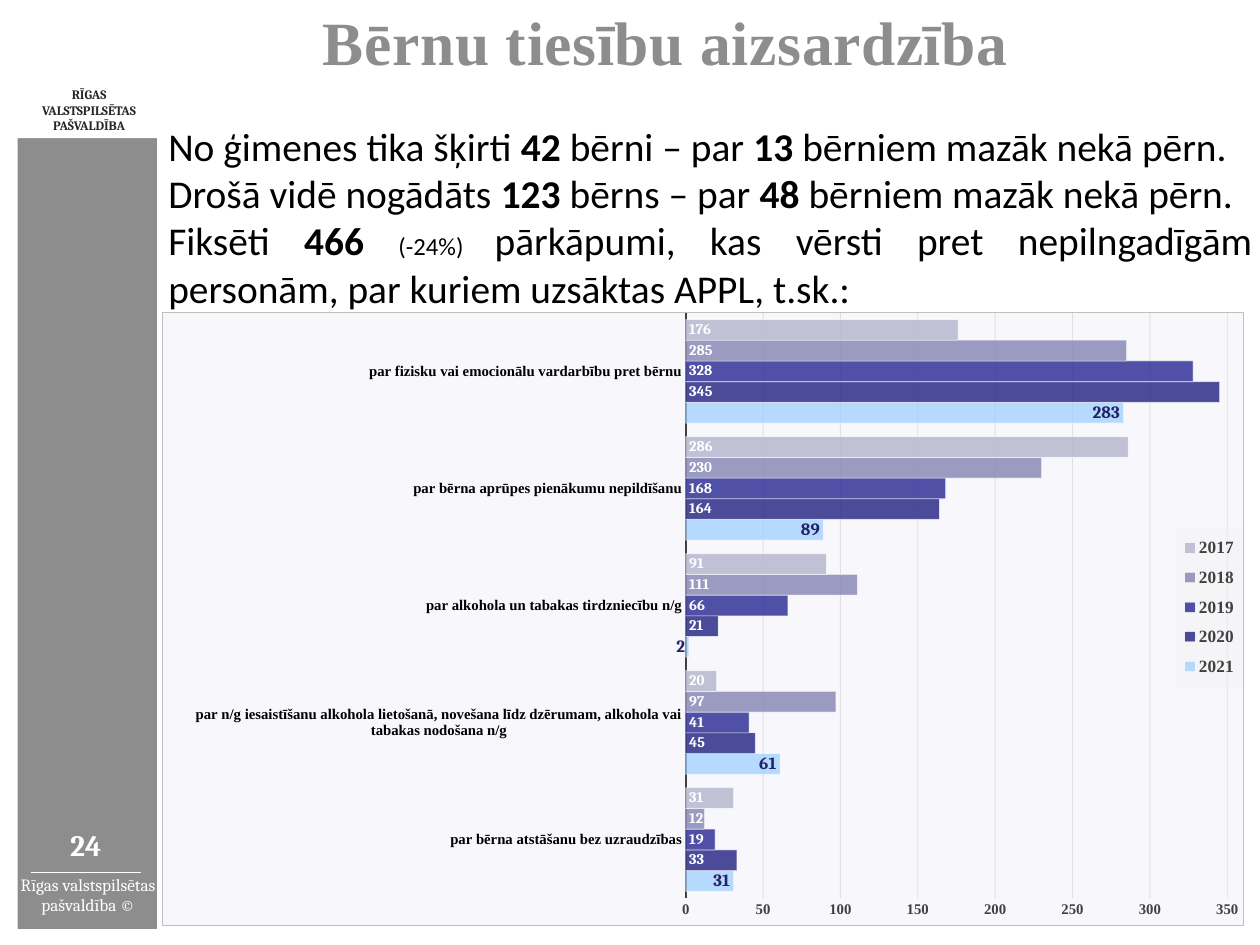
"""Build the slide on protecting children's rights, with a bar chart by year."""
from pptx import Presentation, util as u
from pptx.chart import data as cd
from pptx.dml import color as dc
from pptx.enum import chart as ec, shapes as es, text as et
from pptx.oxml import parse_xml
from pptx.oxml.ns import nsdecls

Theme = {
    "grey": "8C8D8C", "white": "FFFFFF", "black": "000000", "dark": "262626",
    "axis": "404040", "grid": "0D0D0D", "navy": "222267", "pale": "D1D1F0",
    "edge": "BFBFBF", "key": "F2F2F2",
    "head": "Times New Roman", "side": "Cambria", "body": "Calibri",
    "title": 50, "text": 32, "small": 20, "page": 24, "foot": 14, "name": 10.5,
    "tick": 12, "big": 14,
}
Years = [
    ("2021", "99CCFF", 69, (31, 61, 2, 89, 283)),
    ("2020", "2D2D88", 85, (33, 45, 21, 164, 345)),
    ("2019", "333399", 85, (19, 41, 66, 168, 328)),
    ("2018", "8B8BB7", 85, (12, 97, 111, 230, 285)),
    ("2017", "B8B8D0", 85, (31, 20, 91, 286, 176)),
]
Cats = [
    "par bērna atstāšanu bez uzraudzības",
    "par n/g iesaistīšanu alkohola lietošanā, novešana līdz dzērumam, alkohola vai tabakas nodošana n/g",
    "par alkohola un tabakas tirdzniecību n/g",
    "par bērna aprūpes pienākumu nepildīšanu",
    "par fizisku vai emocionālu vardarbību pret bērnu",
]

deck = Presentation()
deck.slide_width, deck.slide_height = u.Inches(14.22), u.Inches(10.67)
col, row = deck.slide_width / 100, deck.slide_height / 100
slide = deck.slides.add_slide(deck.slide_layouts[6])
shapes = slide.shapes
rgb = dc.RGBColor.from_string


def place(x, y, w, h):
    """Turn percent of the slide into lengths."""
    return [int(x * col), int(y * row), int(w * col), int(h * row)]


def style(font, face, size, color, bold=True):
    """Set face, size, colour and weight of a font."""
    font.name, font.size, font.bold = face, u.Pt(size), bold
    font.color.rgb = rgb(Theme[color])


for spot, fill in [((1.41, 14.06, 11.04, 84.25), "grey"), ((1.27, 8.72, 11.6, 5.9), "white")]:
    block = shapes.add_shape(es.MSO_SHAPE.RECTANGLE, *place(*spot))
    block.shadow.inherit = False
    block.fill.solid()
    block.fill.fore_color.rgb = rgb(Theme[fill])
    block.line.fill.background()

x, y, end, base = place(2.46, 92.31, 11.18, 92.31)
rule = shapes.add_connector(es.MSO_CONNECTOR.STRAIGHT, x, y, end, base)
rule.line.color.rgb = rgb(Theme["white"])
rule.line.width = u.Pt(1)
rule._element.spPr.append(parse_xml(f"<a:effectLst {nsdecls('a')}/>"))

big, small = Theme["text"], Theme["small"]
Body = [
    [("No ģimenes tika šķirti ", big, False), ("42", big, True), (" bērni – par ", big, False),
     ("13", big, True), (" bērniem mazāk nekā pērn.", big, False)],
    [("Drošā vidē nogādāts ", big, False), ("123", big, True), (" bērns – par ", big, False),
     ("48", big, True), (" bērniem mazāk nekā pērn.", big, False)],
    [("Fiksēti ", big, False), ("466 ", big, True), ("(-24%) ", small, False),
     ("pārkāpumi, kas vērsti pret nepilngadīgām personām, par kuriem uzsāktas APPL, t.sk.:", big, False)],
]
mid, top = et.MSO_ANCHOR.MIDDLE, et.MSO_ANCHOR.TOP
center, just = et.PP_ALIGN.CENTER, et.PP_ALIGN.JUSTIFY
Boxes = [
    ((1.48, 92.6, 11.04, 4.12), (0, 0, 0, 0), mid, center, "side", "white",
     [[("Rīgas valstspilsētas pašvaldība ©", Theme["foot"], False)]]),
    ((1.27, 8.72, 11.6, 5.9), (.7, .47, .7, .47), mid, center, "side", "dark",
     [[("RĪGAS VALSTSPILSĒTAS PAŠVALDĪBA", Theme["name"], True)]]),
    ((5.2, 87.07, 3.23, 4.78), (0, .47, 0, .47), top, center, "side", "white",
     [[("24", Theme["page"], True)]]),
    ((0, -.19, 100, 9.56), (6.1, .56, .42, .56), top, center, "head", "grey",
     [[("Bērnu tiesību aizsardzība", Theme["title"], True)]]),
    ((12.94, 10.87, 86.92, 24.09), (.42, .56, .42, .56), mid, just, "body", "black", Body),
]
for spot, pad, anchor, align, face, ink, paras in Boxes:
    frame = shapes.add_textbox(*place(*spot)).text_frame
    frame.word_wrap, frame.vertical_anchor = True, anchor
    (frame.margin_left, frame.margin_top,
     frame.margin_right, frame.margin_bottom) = place(*pad)
    for i, runs in enumerate(paras):
        para = frame.add_paragraph() if i else frame.paragraphs[0]
        para.alignment = align
        for words, size, bold in runs:
            run = para.add_run()
            run.text = words
            style(run.font, Theme[face], size, ink, bold)
            if face == "head":
                run.font._element.set("spc", "50")

data = cd.CategoryChartData()
data.categories = Cats
for year, _, _, vals in Years:
    data.add_series(year, vals)
chart = shapes.add_chart(ec.XL_CHART_TYPE.BAR_CLUSTERED,
                         *place(12.87, 32.99, 85.86, 64.95), data).chart
style(chart.font, Theme["side"], 10, "black", False)
chart.has_title = False
plot = chart.plots[0]
plot.gap_width, plot.vary_by_categories = 65, False

for bars, (year, fill, _, _) in zip(plot.series, Years):
    bars.format.fill.solid()
    bars.format.fill.fore_color.rgb = rgb(fill)
    bars.format.line.color.rgb = rgb(Theme["white"])
    bars.format.line.width = u.Pt(.75)
    last = year == "2021"
    tags = bars.data_labels
    tags.show_value = True
    tags.position = ec.XL_LABEL_POSITION.INSIDE_END if last else ec.XL_LABEL_POSITION.INSIDE_BASE
    style(tags.font, Theme["side"], Theme["big" if last else "tick"], "navy" if last else "white")

cats, vals = chart.category_axis, chart.value_axis
for axis, ink in [(cats, "black"), (vals, "axis")]:
    axis.major_tick_mark = axis.minor_tick_mark = ec.XL_TICK_MARK.NONE
    style(axis.tick_labels.font, Theme["head"], Theme["tick"], ink)
cats.format.line.color.rgb = rgb(Theme["axis"])
cats.format.line.width = u.Pt(1.5)
vals.format.line.fill.background()
vals.minimum_scale, vals.maximum_scale, vals.major_unit = 0, 350, 50
vals.has_major_gridlines = True
mesh = vals.major_gridlines.format.line
mesh.color.rgb = rgb(Theme["grid"])
mesh.width = u.Pt(.75)

chart.has_legend = True
key = chart.legend
key.position = ec.XL_LEGEND_POSITION.RIGHT
key.include_in_layout = False
style(key.font, Theme["head"], Theme["big"], "axis")

root = chart.element
for host, inner, spot in [("plotArea", True, (48.4, .1, 50.1, 95.5)),
                          ("legend", False, (93.8, 35.2, 6.1, 25.9))]:
    node = root.xpath(f"./c:chart/c:{host}")[0]
    for old in node.xpath("./c:layout"):
        node.remove(old)
    aim = '<c:layoutTarget val="inner"/>' if inner else ""
    sides = "".join(f'<c:{tag} val="{part / 100:.3f}"/>' for tag, part in zip("xywh", spot))
    node.insert(0 if inner else 1, parse_xml(
        f"<c:layout {nsdecls('c')}><c:manualLayout>{aim}"
        f'<c:xMode val="edge"/><c:yMode val="edge"/>{sides}'
        "</c:manualLayout></c:layout>"))

edge = f'<a:ln w="9525"><a:solidFill><a:srgbClr val="{Theme["edge"]}"/></a:solidFill></a:ln>'
for spot, fill, line in [("./c:chart", "pale", edge), ("./c:chart/c:legend/c:overlay", "key", "")]:
    root.xpath(spot)[0].addnext(parse_xml(
        f"<c:spPr {nsdecls('c', 'a')}><a:solidFill>"
        f'<a:srgbClr val="{Theme[fill]}"/></a:solidFill>{line}</c:spPr>'))

Fades = [("./c:spPr/a:solidFill", 17), (".//c:legend/c:spPr/a:solidFill", 39),
         (".//c:majorGridlines//a:solidFill", 10), (".//c:ser/c:spPr/a:ln/a:solidFill", 50)]
Fades += [(f".//c:ser[{i}]/c:spPr/a:solidFill", item[2]) for i, item in enumerate(Years, 1)]
for spot, share in Fades:
    for tone in root.xpath(spot + "/a:srgbClr"):
        tone.append(parse_xml(f'<a:alpha {nsdecls("a")} val="{share * 1000}"/>'))

deck.save("out.pptx")
